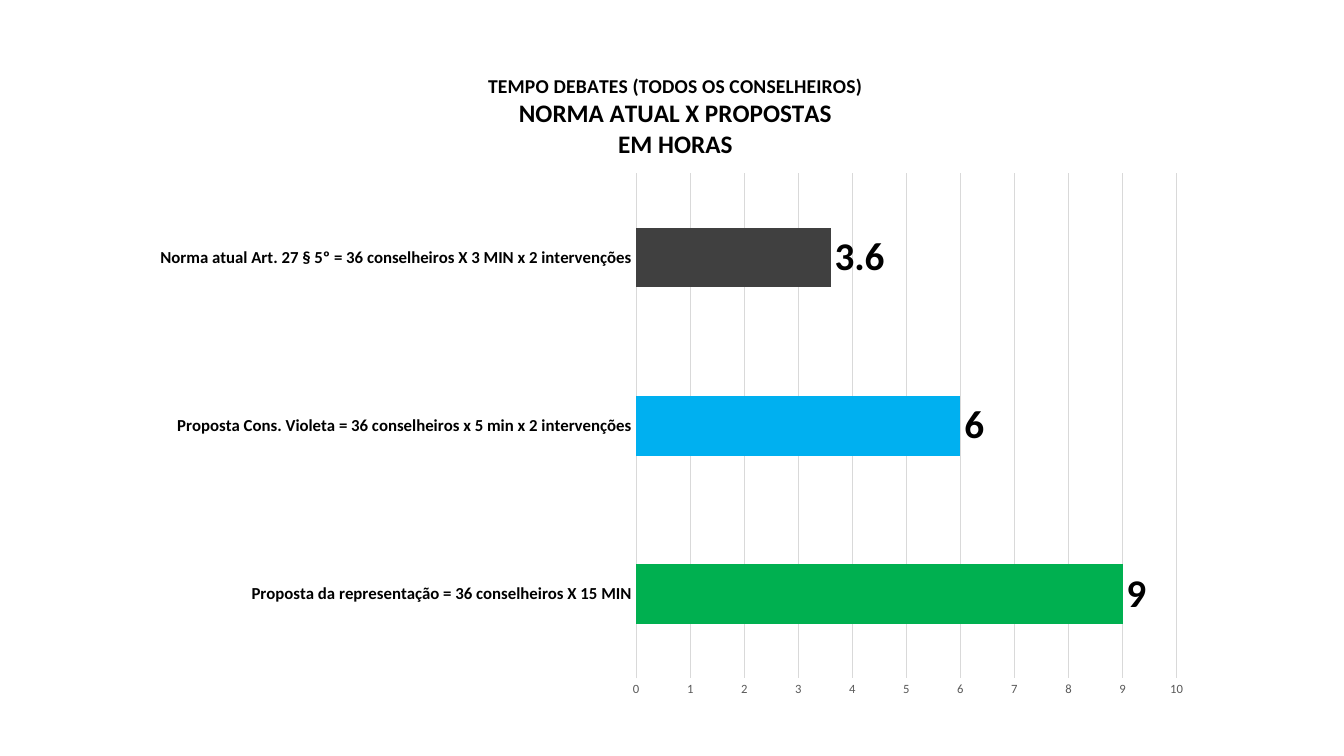
from dataclasses import dataclass

from lxml import etree
from pptx import Presentation
from pptx import util as u
from pptx.chart.data import CategoryChartData
from pptx.dml.color import RGBColor
from pptx.enum import chart as c
from pptx.oxml.ns import qn


@dataclass(frozen=True)
class Box:
    left: float
    top: float
    width: float
    height: float


@dataclass(frozen=True)
class Bar:
    label: str
    hours: float
    color: str


@dataclass(frozen=True)
class TitleLine:
    text: str
    size: int


FONT = "Calibri"
CHART = Box(1.39, 0.45, 10.56, 6.59)
PLOT = Box(6.31, 1.72, 5.36, 5.01)
TITLE = Box(4.81, 0.69, 3.71, 0.9)
BARS = [
    Bar("Proposta da representação = 36 conselheiros X 15 MIN", 9, "00B050"),
    Bar("Proposta Cons. Violeta = 36 conselheiros x 5 min x 2 intervenções", 6, "00B0F0"),
    Bar("Norma atual Art. 27 § 5º = 36 conselheiros X 3 MIN x 2 intervenções", 3.6, "404040"),
]
TITLE_LINES = [
    TitleLine("TEMPO DEBATES (TODOS OS CONSELHEIROS)", 14),
    TitleLine("NORMA ATUAL X PROPOSTAS", 18),
    TitleLine("EM HORAS", 18),
]


def style_font(font, size: float, color: str, bold: bool = False) -> None:
    font.name = FONT
    font.size = u.Pt(size)
    font.bold = bold
    font.color.rgb = RGBColor.from_string(color)


def fill_solid(fill, color: str) -> None:
    fill.solid()
    fill.fore_color.rgb = RGBColor.from_string(color)


def style_line(line, color: str) -> None:
    line.color.rgb = RGBColor.from_string(color)
    line.width = u.Pt(0.75)


def place(element, index: int, box: Box, with_size: bool) -> None:
    for old_layout in element.findall(qn("c:layout")):
        element.remove(old_layout)
    layout = etree.Element(qn("c:layout"))
    manual = etree.SubElement(layout, qn("c:manualLayout"))
    settings = [("xMode", "edge"), ("yMode", "edge"),
                ("x", (box.left - CHART.left) / CHART.width),
                ("y", (box.top - CHART.top) / CHART.height)]
    if with_size:
        settings.insert(0, ("layoutTarget", "inner"))
        settings += [("w", box.width / CHART.width), ("h", box.height / CHART.height)]
    for name, value in settings:
        etree.SubElement(manual, qn(f"c:{name}")).set("val", str(value))
    element.insert(index, layout)


def add_title(chart) -> None:
    chart.has_title = True
    frame = chart.chart_title.text_frame
    for number, line in enumerate(TITLE_LINES):
        paragraph = frame.add_paragraph() if number else frame.paragraphs[0]
        run = paragraph.add_run()
        run.text = line.text
        style_font(run.font, line.size, "000000", True)
    chart.chart_title.include_in_layout = False
    place(chart.chart_title._element, 1, TITLE, False)


def style_axes(chart) -> None:
    category, value = chart.category_axis, chart.value_axis
    for axis in (category, value):
        axis.major_tick_mark = axis.minor_tick_mark = c.XL_TICK_MARK.NONE
    style_font(category.tick_labels.font, 12, "000000", True)
    style_line(category.format.line, "D9D9D9")
    style_font(value.tick_labels.font, 9, "595959")
    value.format.line.fill.background()
    value.minimum_scale, value.maximum_scale, value.major_unit = 0, 10, 1
    value.has_major_gridlines = True
    style_line(value.major_gridlines.format.line, "D9D9D9")


def style_bars(plot) -> None:
    plot.gap_width = 182
    plot.vary_by_categories = False
    series = plot.series[0]
    fill_solid(series.format.fill, "4472C4")
    for index, bar in enumerate(BARS):
        fill_solid(series.points[index].format.fill, bar.color)
    labels = series.data_labels
    labels.show_value = True
    labels.position = c.XL_LABEL_POSITION.OUTSIDE_END
    style_font(labels.font, 28, "000000", True)


def add_debate_chart(slide) -> None:
    data = CategoryChartData()
    data.categories = [bar.label for bar in BARS]
    data.add_series("Series 1", [bar.hours for bar in BARS])
    chart = slide.shapes.add_chart(
        c.XL_CHART_TYPE.BAR_CLUSTERED, u.Inches(CHART.left), u.Inches(CHART.top),
        u.Inches(CHART.width), u.Inches(CHART.height), data).chart
    style_font(chart.font, 10, "000000")
    chart.has_legend = False
    add_title(chart)
    style_axes(chart)
    style_bars(chart.plots[0])
    place(chart._chartSpace.find(f".//{qn('c:plotArea')}"), 0, PLOT, True)


def main() -> None:
    presentation = Presentation()
    presentation.slide_width = u.Inches(13.33)
    presentation.slide_height = u.Inches(7.5)
    slide = presentation.slides.add_slide(presentation.slide_layouts[6])
    fill_solid(slide.background.fill, "FFFFFF")
    add_debate_chart(slide)
    presentation.save("out.pptx")


if __name__ == "__main__":
    main()
